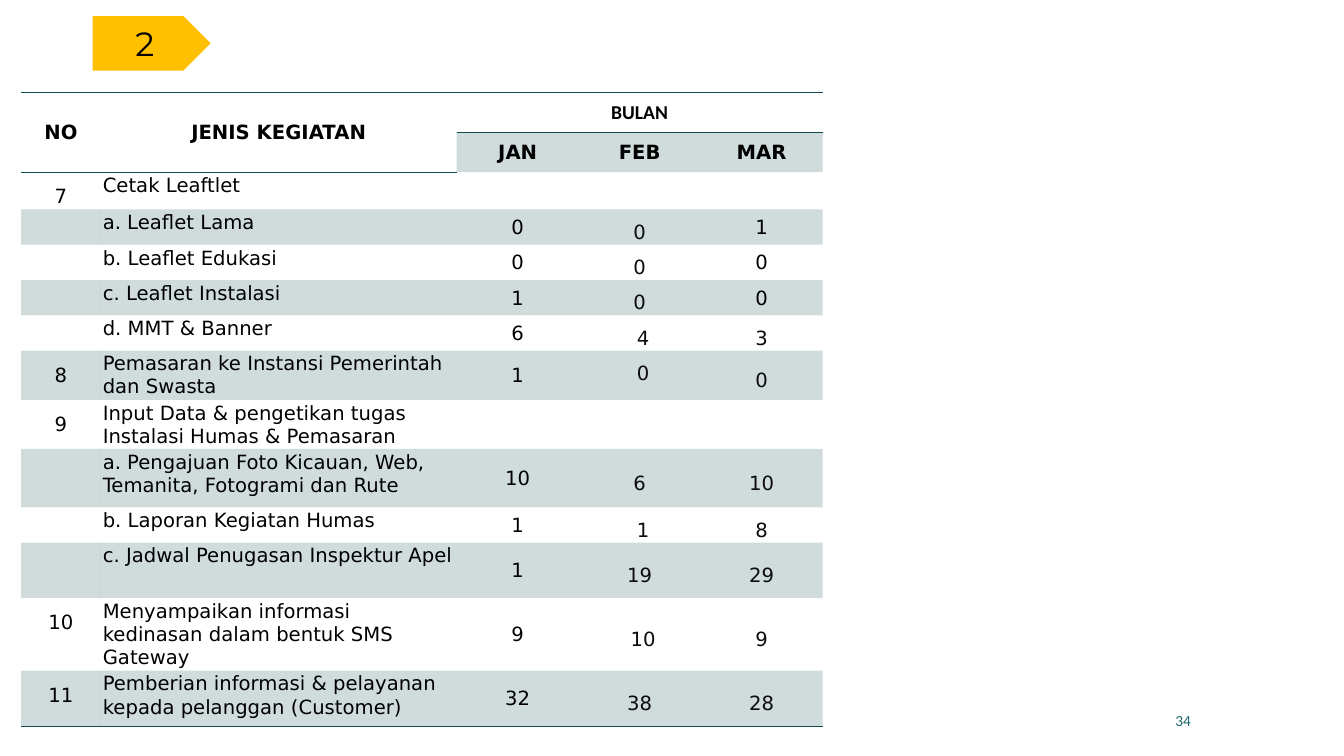
from dataclasses import dataclass

from lxml import etree
from pptx import Presentation
from pptx.dml.color import RGBColor
from pptx.enum.shapes import MSO_SHAPE
from pptx.enum.text import MSO_ANCHOR, PP_ALIGN
from pptx.oxml.ns import qn
from pptx.util import Inches, Pt

PENTAGON = MSO_SHAPE.PENTAGON
TOP, MIDDLE = MSO_ANCHOR.TOP, MSO_ANCHOR.MIDDLE
LEFT, CENTER, RIGHT = PP_ALIGN.LEFT, PP_ALIGN.CENTER, PP_ALIGN.RIGHT


@dataclass(frozen=True)
class Theme:
    black: str = "000000"
    soft_black: str = "0C0C0C"
    teal: str = "164B4F"
    page_teal: str = "1F696F"
    amber: str = "FFC000"
    body_font: str = "DejaVu Sans"
    plain_font: str = "Calibri"
    badge_font: str = "Montserrat"
    body_size: int = 14
    badge_size: int = 24
    page_size: int = 11
    band_alpha: int = 20
    rule_width: int = 1


THEME = Theme()
NO_GRID_STYLE = "{2D5ABB26-0587-4C30-8999-92F81FD0307C}"

# Cell styles: margins are left, top, right, bottom in inches
HEADER = dict(margins=(0.2, 0.08, 0.2, 0.08), anchor=MIDDLE, align=CENTER, bold=True)
NUMBER = dict(margins=(0.02, 0.02, 0.02, 0), align=CENTER, spacing=1.5)
ACTIVITY = dict(margins=(0.02, 0.02, 0.02, 0))
TIGHT = dict(margins=(0.01, 0.01, 0.01, 0), anchor=MIDDLE, align=CENTER)
LOOSE = dict(margins=(0.07, 0, 0.07, 0), anchor=MIDDLE, align=CENTER,
             spacing=1.5, color=THEME.soft_black)
LOOSE_TOP = {**LOOSE, "anchor": TOP}
SHIFTED = {**LOOSE, "indent": (0.07, 0)}
SHIFTED_TOP = {**SHIFTED, "anchor": TOP}


def hanging(inches):
    return {**LOOSE_TOP, "indent": (inches, -inches)}


COLUMN_WIDTHS = (0.79, 3.53, 1.21, 1.21, 1.21)
MONTHS = ("JAN", "FEB", "MAR")
HEADER_HEIGHT = 0.38

# Height, number, activity, month values, styles of the FEB and MAR values
ACTIVITIES = (
    (0.36, "7", "Cetak Leaftlet", None, None, None),
    (0.34, "", "a. Leaflet Lama", (0, 0, 1), hanging(0.12), TIGHT),
    (0.34, "", "b. Leaflet Edukasi", (0, 0, 0), hanging(0.26), TIGHT),
    (0.34, "", "c. Leaflet Instalasi", (1, 0, 0), hanging(0.5), TIGHT),
    (0.34, "", "d. MMT & Banner", (6, 4, 3), SHIFTED_TOP, LOOSE),
    (0.47, "8", "Pemasaran ke Instansi Pemerintah dan Swasta", (1, 0, 0), SHIFTED_TOP, LOOSE),
    (0.47, "9", "Input Data & pengetikan tugas Instalasi Humas & Pemasaran", None, None, None),
    (0.58, "", "a. Pengajuan Foto Kicauan, Web, Temanita, Fotogrami dan Rute",
     (10, 6, 10), LOOSE, LOOSE),
    (0.34, "", "b. Laporan Kegiatan Humas", (1, 1, 8), SHIFTED, LOOSE),
    (0.55, "", "c. Jadwal Penugasan Inspektur Apel", (1, 19, 29), LOOSE, LOOSE),
    (0.7, "10", "Menyampaikan informasi kedinasan dalam bentuk SMS Gateway",
     (9, 10, 9), SHIFTED, LOOSE),
    (0.55, "11", "Pemberian informasi & pelayanan kepada pelanggan (Customer)",
     (32, 38, 28), LOOSE, LOOSE),
)


def write(para, text, size, font, color, bold=False):
    span = para.add_run()
    span.text = text
    formats = {"size": Pt(size), "name": font, "bold": bold}
    for name, value in formats.items():
        setattr(span.font, name, value)
    span.font.color.rgb = RGBColor.from_string(color)


def write_cell(cell, text, margins, anchor=TOP, align=LEFT, spacing=None,
               color=THEME.black, bold=False, indent=None, font=THEME.body_font):
    sides = ("margin_left", "margin_top", "margin_right", "margin_bottom")
    for side, margin in zip(sides, margins):
        setattr(cell, side, Inches(margin))
    cell.vertical_anchor = anchor
    para = cell.text_frame.paragraphs[0]
    para.alignment = align
    if spacing:
        para.line_spacing = spacing
    if indent:
        properties = para._p.get_or_add_pPr()
        for name, inches in zip(("marL", "indent"), indent):
            properties.set(name, str(Inches(inches)))
    if text:
        write(para, text, THEME.body_size, font, color, bold)


def rule_cell(cell, *edges):
    """Draws the given edges (lnT before lnB) of a cell."""
    for edge in edges:
        line = etree.SubElement(cell._tc.get_or_add_tcPr(), qn("a:" + edge),
                                w=str(Pt(THEME.rule_width)))
        fill = etree.SubElement(line, qn("a:solidFill"))
        etree.SubElement(fill, qn("a:srgbClr"), val=THEME.teal)


def shade_cell(cell, shaded):
    if not shaded:
        cell.fill.background()
        return
    cell.fill.solid()
    cell.fill.fore_color.rgb = RGBColor.from_string(THEME.teal)
    tint = cell._tc.tcPr.find(qn("a:solidFill")).find(qn("a:srgbClr"))
    etree.SubElement(tint, qn("a:alpha"), val=str(THEME.band_alpha * 1000))


def fill_header(table):
    write_cell(table.cell(0, 0), "NO", **HEADER)
    write_cell(table.cell(0, 1), "JENIS KEGIATAN", **HEADER)
    write_cell(table.cell(0, 2), "BULAN", font=THEME.plain_font, **HEADER)
    for column, month in enumerate(MONTHS, 2):
        write_cell(table.cell(1, column), month, **HEADER)
    for column in range(len(COLUMN_WIDTHS)):
        rule_cell(table.cell(0, column), "lnT", "lnB")
        if column < 2:
            rule_cell(table.cell(1, column), "lnB")
            table.cell(0, column).merge(table.cell(1, column))
        shade_cell(table.cell(0, column), False)
        shade_cell(table.cell(1, column), column >= 2)
    table.cell(0, 2).merge(table.cell(0, 4))


def fill_activities(table):
    last = len(ACTIVITIES) - 1
    for index, (_, number, activity, values, feb, mar) in enumerate(ACTIVITIES):
        texts = (number, activity, *(values or ("", "", "")))
        styles = (NUMBER, ACTIVITY, TIGHT, feb or TIGHT, mar or TIGHT)
        for column, (text, style) in enumerate(zip(texts, styles)):
            cell = table.cell(index + 2, column)
            write_cell(cell, str(text), **style)
            if index == last:
                rule_cell(cell, "lnB")
            shade_cell(cell, index % 2 == 1)


def add_activity_table(page, left, top):
    heights = [HEADER_HEIGHT] * 2 + [row[0] for row in ACTIVITIES]
    frame = page.shapes.add_table(len(heights), len(COLUMN_WIDTHS), Inches(left), Inches(top),
                                  Inches(sum(COLUMN_WIDTHS)), Inches(sum(heights)))
    table = frame.table
    for name in ("first_row", "horz_banding"):
        setattr(table, name, False)
    table._tbl.tblPr.find(qn("a:tableStyleId")).text = NO_GRID_STYLE
    for column, width in zip(table.columns, COLUMN_WIDTHS):
        column.width = Inches(width)
    for row, height in zip(table.rows, heights):
        row.height = Inches(height)
    fill_header(table)
    fill_activities(table)


def add_badge(page, left, top, width, height):
    box = page.shapes.add_shape(PENTAGON, *map(Inches, (left, top, width, height)))
    box.shadow.inherit = False
    box.fill.solid()
    box.fill.fore_color.rgb = RGBColor.from_string(THEME.amber)
    box.line.fill.background()
    box.text_frame.vertical_anchor = MIDDLE
    para = box.text_frame.paragraphs[0]
    para.alignment = CENTER
    write(para, "2", THEME.badge_size, THEME.badge_font, THEME.black)


def add_page_number(page, left, top, width, height):
    box = page.shapes.add_textbox(*map(Inches, (left, top, width, height)))
    box.text_frame.word_wrap = True
    box.text_frame.vertical_anchor = MIDDLE
    para = box.text_frame.paragraphs[0]
    para.alignment = RIGHT
    write(para, "34", THEME.page_size, THEME.plain_font, THEME.page_teal)


def main():
    deck = Presentation()
    deck.slide_width, deck.slide_height = Inches(13.33), Inches(7.5)
    page = deck.slides.add_slide(deck.slide_layouts[6])
    add_page_number(page, 8.8, 6.95, 3.11, 0.4)
    add_activity_table(page, 0.21, 0.92)
    add_badge(page, 0.92, 0.16, 1.17, 0.54)
    deck.save("out.pptx")


if __name__ == "__main__":
    main()
